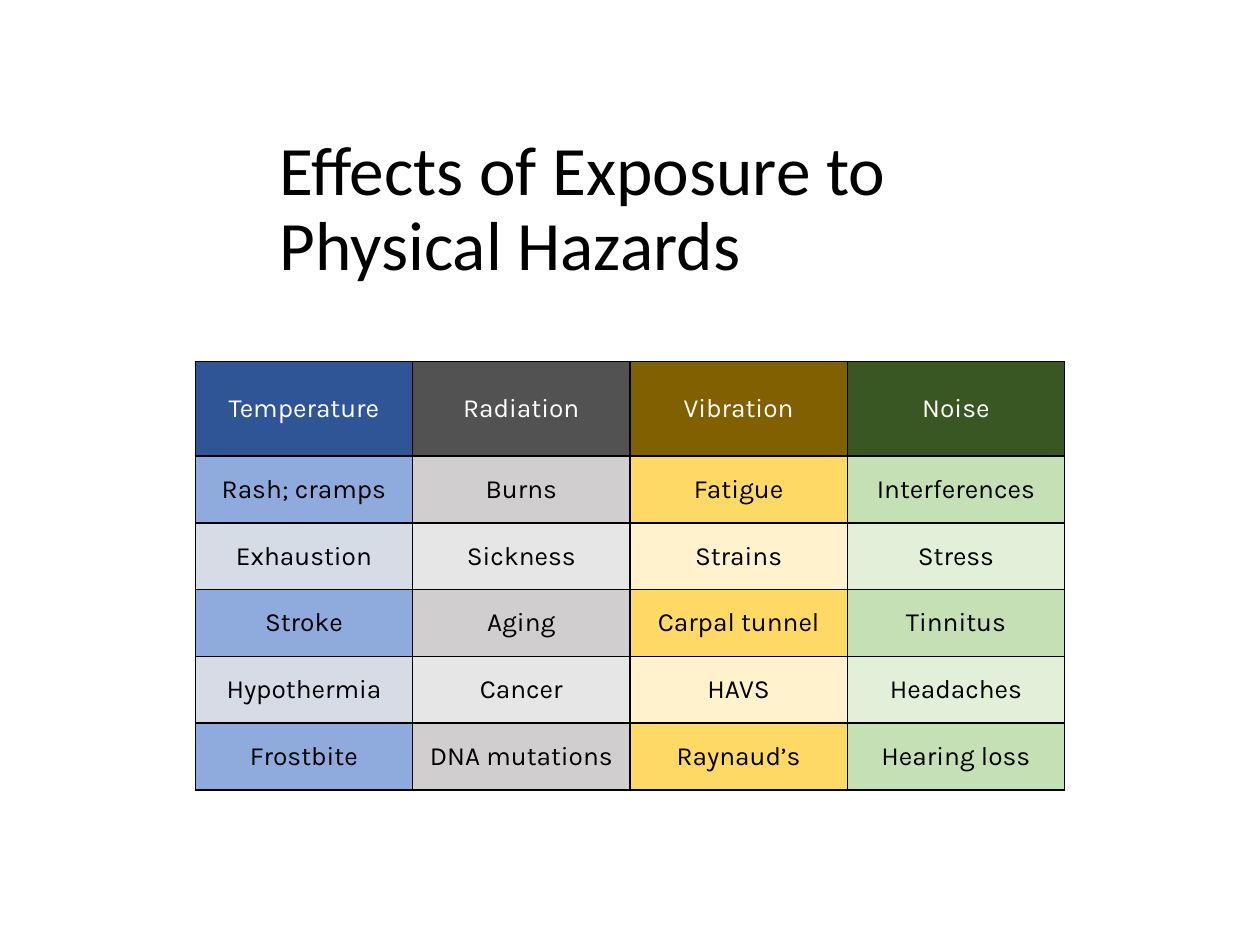
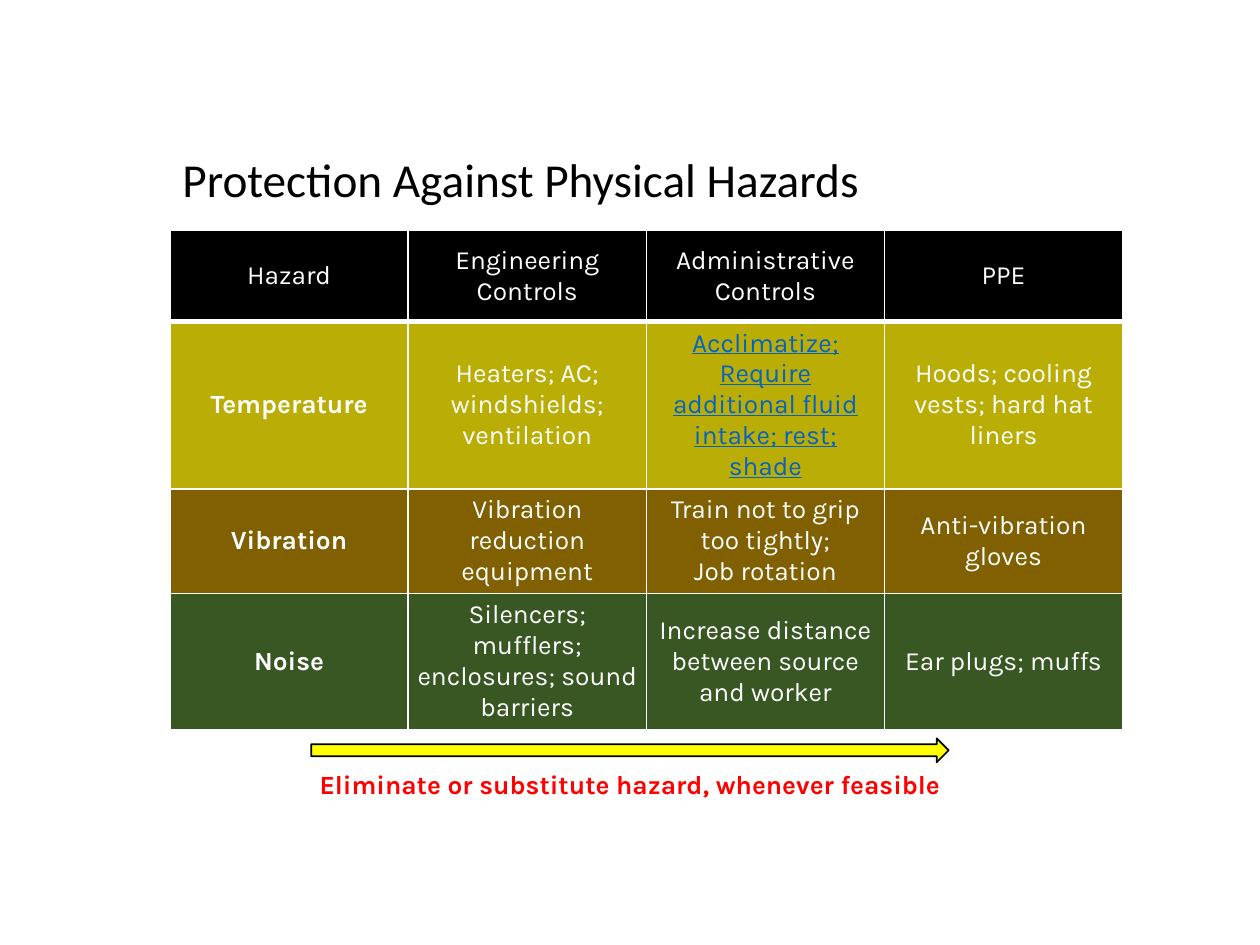
from dataclasses import dataclass

from lxml import etree
from pptx import Presentation
from pptx import util as u
from pptx.dml.color import RGBColor
from pptx.enum import shapes, text
from pptx.oxml import ns
from pptx.slide import Slide
from pptx.table import _Cell
from pptx.text.text import TextFrame

BLACK, WHITE, LINK = "000000", "FFFFFF", "0563C1"
RED, YELLOW = "FF0000", "FFFF00"
OLIVE, BROWN, GREEN = "BAAD06", "806000", "385723"
TITLE_FONT, BODY_FONT, BODY_SIZE = "Calibri", "Karla", 15


@dataclass(frozen=True)
class Area:
    left: float
    top: float
    width: float
    height: float

    def lengths(self) -> list[u.Length]:
        return [u.Inches(n) for n in (self.left, self.top, self.width, self.height)]


@dataclass(frozen=True)
class Entry:
    words: str
    fill: str
    color: str = WHITE
    bold: bool = False
    underline: bool = False


@dataclass(frozen=True)
class Grid:
    area: Area
    row_heights: list[float]
    rows: list[list[Entry]]
    border: str
    header_rule: float = 1


@dataclass(frozen=True)
class EffectColumn:
    hazard: str
    header: str
    dark: str
    light: str
    effects: list[str]

    def entries(self) -> list[Entry]:
        body = [Entry(effect, (self.dark, self.light)[i % 2], BLACK)
                for i, effect in enumerate(self.effects)]
        return [Entry(self.hazard, self.header), *body]


@dataclass(frozen=True)
class ControlRow:
    hazard: str
    fill: str
    controls: list[str]
    linked: int | None = None

    def entries(self) -> list[Entry]:
        body = [Entry(words, self.fill, LINK if i == self.linked else WHITE,
                      underline=i == self.linked)
                for i, words in enumerate(self.controls)]
        return [Entry(self.hazard, self.fill, bold=True), *body]


EFFECTS = [
    EffectColumn("Temperature", "2F5597", "8FAADC", "D6DCE5",
                 ["Rash; cramps", "Exhaustion", "Stroke", "Hypothermia", "Frostbite"]),
    EffectColumn("Radiation", "525252", "D0CECE", "E7E6E6",
                 ["Burns", "Sickness", "Aging", "Cancer", "DNA mutations"]),
    EffectColumn("Vibration", BROWN, "FFD966", "FFF2CC",
                 ["Fatigue", "Strains", "Carpal tunnel", "HAVS", "Raynaud’s"]),
    EffectColumn("Noise", GREEN, "C5E0B4", "E2F0D9",
                 ["Interferences", "Stress", "Tinnitus", "Headaches", "Hearing loss"]),
]

CONTROL_HEADS = ["Hazard", "Engineering Controls", "Administrative Controls", "PPE"]
CONTROLS = [
    ControlRow("Temperature", OLIVE,
               ["Heaters; AC; windshields; ventilation",
                "Acclimatize; Require additional fluid intake; rest; shade",
                "Hoods; cooling vests; hard hat liners"], linked=1),
    ControlRow("Vibration", BROWN,
               ["Vibration reduction equipment",
                "Train not to grip too tightly;\nJob rotation",
                "Anti-vibration gloves"]),
    ControlRow("Noise", GREEN,
               ["Silencers; mufflers; enclosures; sound barriers",
                "Increase distance between source and worker",
                "Ear plugs; muffs"]),
]


def rgb(color: str) -> RGBColor:
    return RGBColor.from_string(color)


def write(frame: TextFrame, words: str, *, size: float = BODY_SIZE, font: str = BODY_FONT,
          color: str = BLACK, bold: bool = False, underline: bool = False,
          align: text.PP_ALIGN = text.PP_ALIGN.CENTER, spacing: float = 1.0) -> None:
    frame.word_wrap = True
    for i, line in enumerate(words.split("\n")):
        para = frame.add_paragraph() if i else frame.paragraphs[0]
        para.alignment = align
        para.line_spacing = spacing
        span = para.add_run()
        span.text = line
        span.font.size = u.Pt(size)
        span.font.name = font
        span.font.color.rgb = rgb(color)
        span.font.bold = bold
        span.font.underline = underline


def add_title(page: Slide, words: str, area: Area, size: float) -> None:
    box = page.shapes.add_textbox(*area.lengths())
    box.text_frame.vertical_anchor = text.MSO_ANCHOR.MIDDLE
    write(box.text_frame, words, size=size, font=TITLE_FONT,
          align=text.PP_ALIGN.LEFT, spacing=0.9)


def set_borders(cell: _Cell, color: str, bottom: float) -> None:
    properties = cell._tc.get_or_add_tcPr()
    for side, width in {"L": 1, "R": 1, "T": 1, "B": bottom}.items():
        line = etree.SubElement(properties, ns.qn(f"a:ln{side}"), w=str(u.Pt(width)))
        fill = etree.SubElement(line, ns.qn("a:solidFill"))
        etree.SubElement(fill, ns.qn("a:srgbClr"), val=color)


def add_grid(page: Slide, grid: Grid) -> None:
    columns = len(grid.rows[0])
    table = page.shapes.add_table(len(grid.rows), columns, *grid.area.lengths()).table
    table.first_row = table.horz_banding = False
    for column in table.columns:
        column.width = u.Inches(grid.area.width / columns)
    for r, (height, entries) in enumerate(zip(grid.row_heights, grid.rows)):
        table.rows[r].height = u.Inches(height)
        for c, entry in enumerate(entries):
            cell = table.cell(r, c)
            cell.margin_left = cell.margin_right = u.Inches(0.07)
            cell.margin_top = cell.margin_bottom = u.Inches(0.04)
            cell.vertical_anchor = text.MSO_ANCHOR.MIDDLE
            set_borders(cell, grid.border, 1 if r else grid.header_rule)
            cell.fill.solid()
            cell.fill.fore_color.rgb = rgb(entry.fill)
            write(cell.text_frame, entry.words, color=entry.color,
                  bold=entry.bold, underline=entry.underline)


def add_effects_page(page: Slide) -> None:
    add_title(page, "Effects of Exposure to Physical Hazards", Area(2.12, 1.16, 5.75, 1.02), 39.6)
    rows = [list(row) for row in zip(*(column.entries() for column in EFFECTS))]
    add_grid(page, Grid(Area(1.55, 2.87, 6.9, 3.38), [0.75] + [0.53] * 5, rows, BLACK))


def add_protection_page(page: Slide) -> None:
    add_title(page, "Protection Against Physical Hazards", Area(1.35, 0.98, 7, 0.94), 27)
    rows = [[Entry(head, BLACK) for head in CONTROL_HEADS]]
    rows += [control.entries() for control in CONTROLS]
    add_grid(page, Grid(Area(1.35, 1.83, 7.56, 3.93), [0.72, 1.31, 0.82, 1.07],
                        rows, WHITE, header_rule=3))
    advice = page.shapes.add_textbox(*Area(2.19, 6.05, 5.62, 0.35).lengths())
    write(advice.text_frame, "Eliminate or substitute hazard, whenever feasible",
          color=RED, bold=True)
    arrow = page.shapes.add_shape(shapes.MSO_SHAPE.RIGHT_ARROW,
                                  *Area(2.47, 5.86, 5.06, 0.19).lengths())
    arrow.shadow.inherit = False
    arrow.fill.solid()
    arrow.fill.fore_color.rgb = rgb(YELLOW)
    arrow.line.color.rgb = rgb(BLACK)
    arrow.line.width = u.Pt(1)


def main() -> None:
    deck = Presentation()
    deck.slide_width, deck.slide_height = u.Inches(10), u.Inches(7.5)
    for build in (add_effects_page, add_protection_page):
        build(deck.slides.add_slide(deck.slide_layouts[6]))
    deck.save("out.pptx")


if __name__ == "__main__":
    main()
